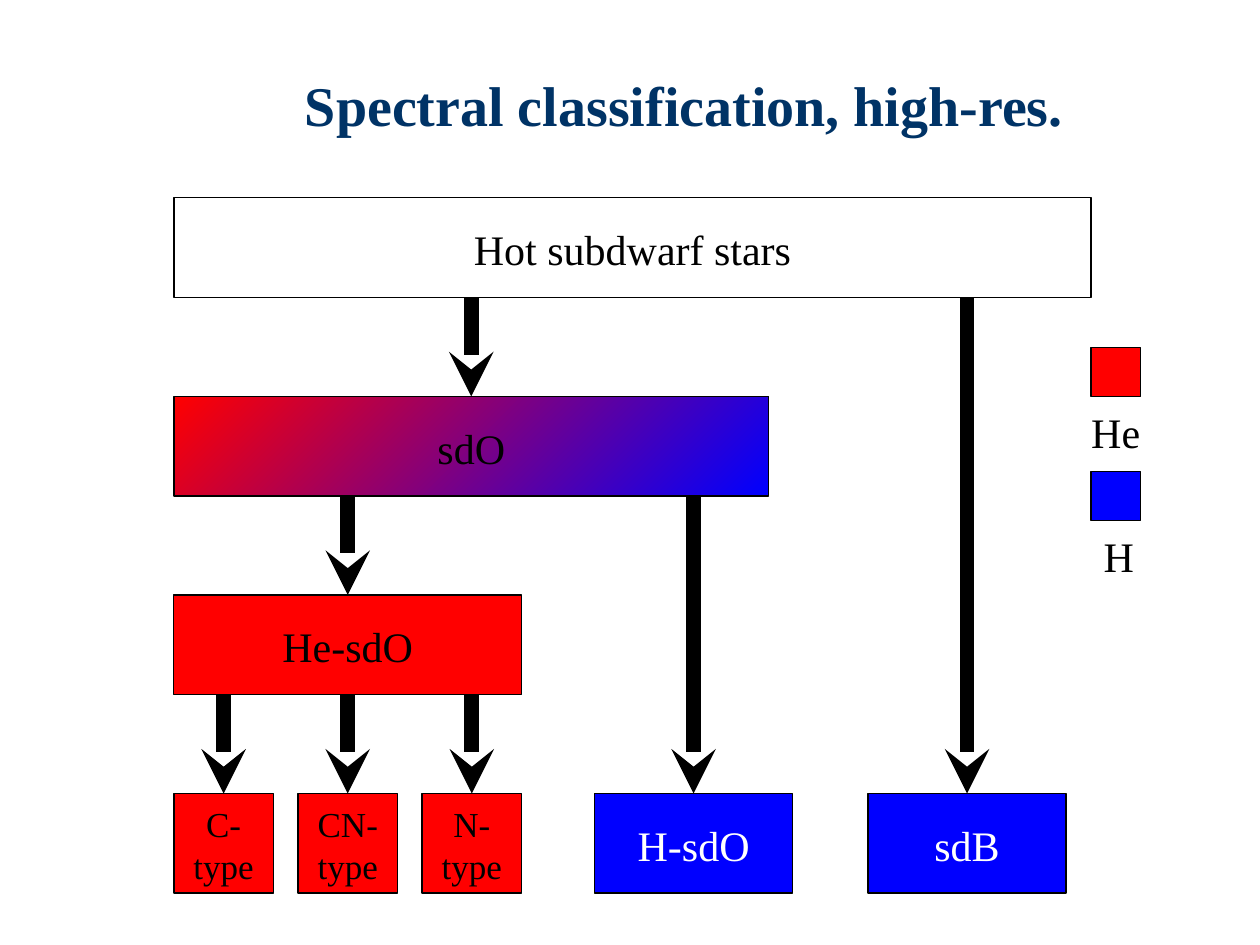
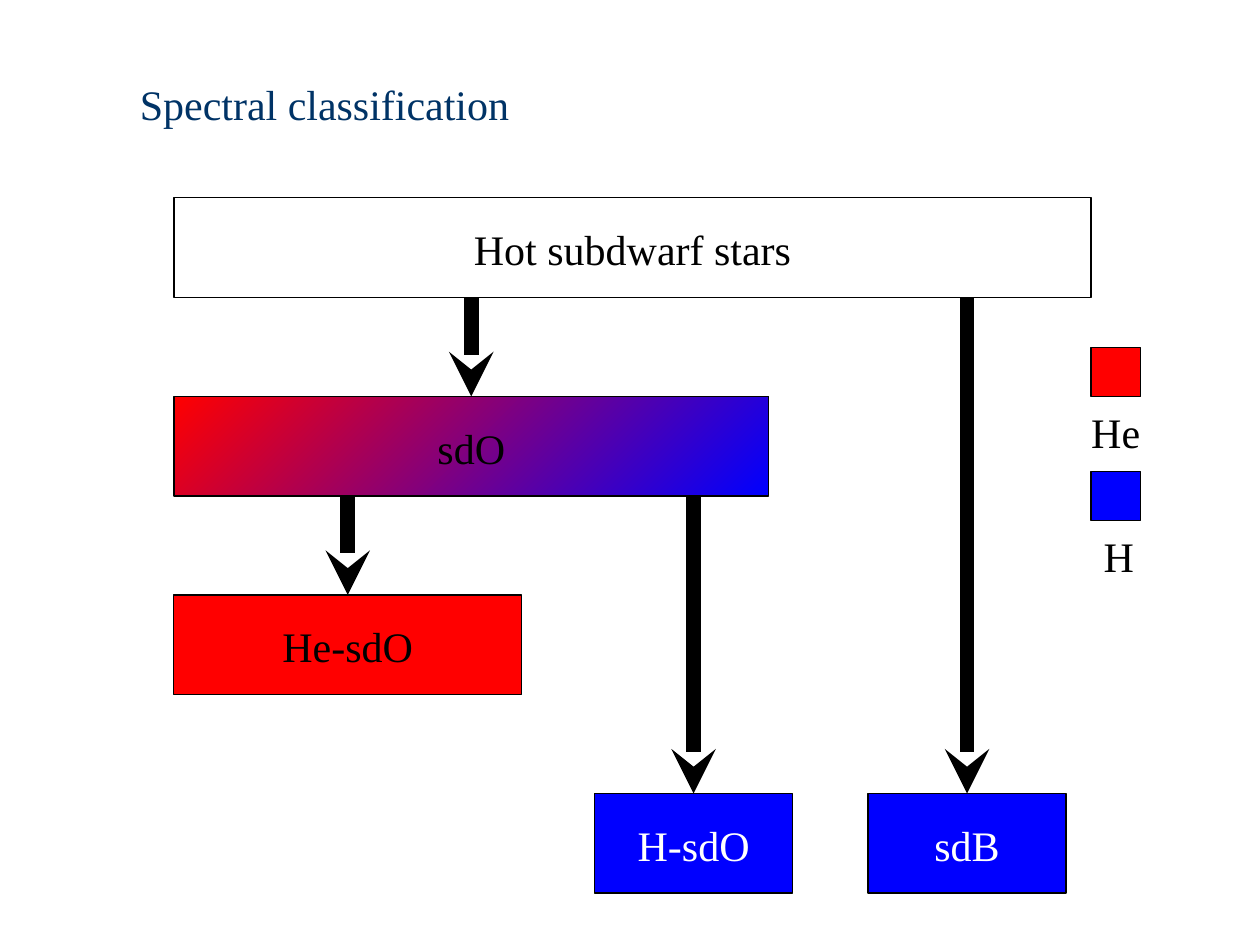
from lxml.etree import SubElement
from pptx import Presentation
from pptx.dml.color import RGBColor
from pptx.enum.shapes import MSO_CONNECTOR as Connector, MSO_SHAPE as Shape
from pptx.enum.text import MSO_ANCHOR as Anchor, MSO_AUTO_SIZE as AutoSize, PP_ALIGN as Align
from pptx.oxml.ns import qn
from pptx.util import Inches, Pt

FONT = "Times New Roman"
BLACK, WHITE, NAVY, RED, BLUE = "000000", "FFFFFF", "003366", "FF0000", "0000FF"
TITLE_ONLY = 5

LEFT, TOP, ROW_STEP, BOX_HEIGHT = 1.38, 1.57, 1.576, 0.79
TYPE_STEP = 0.985
SWATCH, SWATCH_LEFT, SWATCH_TOP, SWATCH_STEP = 0.39, 8.66, 2.76, 0.98

BOX_FRAME = {
    "margin_left": Inches(0.1), "margin_top": Inches(0.07),
    "margin_right": Inches(0.1), "margin_bottom": Inches(0.05),
    "vertical_anchor": Anchor.MIDDLE, "word_wrap": False,
}
LABEL_FRAME = {**BOX_FRAME, "vertical_anchor": Anchor.TOP, "word_wrap": True}
TITLE_FRAME = {
    "margin_left": 0, "margin_top": Inches(0.02), "margin_right": 0, "margin_bottom": 0,
    "vertical_anchor": Anchor.MIDDLE, "word_wrap": True, "auto_size": AutoSize.NONE,
}

COMMON_BOXES = [
    ("Hot subdwarf stars", LEFT, 0, 7.28, (), BLACK, 24),
    ("sdO", LEFT, 1, 4.72, (RED, BLUE), BLACK, 24),
    ("He-sdO", LEFT, 2, 2.76, (RED,), BLACK, 24),
    ("H-sdO", 4.72, 3, 1.57, (BLUE,), WHITE, 24),
    ("sdB", 6.89, 3, 1.57, (BLUE,), WHITE, 24),
]
COMMON_ARROWS = [
    ("Hot subdwarf stars", "sdO"), ("Hot subdwarf stars", "sdB"),
    ("sdO", "He-sdO"), ("sdO", "H-sdO"),
]
TYPES = ["C-\ntype", "CN-\ntype", "N-\ntype"]
TYPE_BOXES = [
    (name, LEFT + i * TYPE_STEP, 3, 0.79, (RED,), BLACK, 20) for i, name in enumerate(TYPES)
]
TYPE_ARROWS = [("He-sdO", name) for name in TYPES]
LEGEND = [("He", RED, 0.79), ("H", BLUE, 0.39)]


def rgb(color):
    """Turn a hex string into a colour."""
    return RGBColor.from_string(color)


def set_all(target, values):
    """Set each named attribute of the target."""
    for name, value in values.items():
        setattr(target, name, value)


def write(shape, text, frame_format, size, color, align=Align.CENTER, bold=False):
    """Put formatted text in a shape."""
    frame = shape.text_frame
    set_all(frame, frame_format)
    frame.text = text
    for para in frame.paragraphs:
        para.alignment = align
        for span in para.runs:
            set_all(span.font, {"name": FONT, "size": Pt(size), "bold": bold})
            span.font.color.rgb = rgb(color)


def add_title(page, text, left, width, size, bold):
    """Place and format the slide title."""
    title = page.shapes.title
    set_all(title, {"left": Inches(left), "top": Inches(0.42),
                    "width": Inches(width), "height": Inches(0.79)})
    write(title, text, TITLE_FRAME, size, NAVY, Align.LEFT, bold)


def add_rect(page, left, top, width, height, colors):
    """Add an outlined rectangle with no fill, one colour or a gradient."""
    rect = page.shapes.add_shape(
        Shape.RECTANGLE, Inches(left), Inches(top), Inches(width), Inches(height))
    rect.shadow.inherit = False
    rect.line.color.rgb = rgb(BLACK)
    rect.line.width = Pt(0.75)
    if not colors:
        rect.fill.background()
    elif len(colors) == 1:
        rect.fill.solid()
        rect.fill.fore_color.rgb = rgb(colors[0])
    else:
        rect.fill.gradient()
        rect.fill.gradient_angle = 315
        for stop, color in zip(rect.fill.gradient_stops, colors):
            stop.color.rgb = rgb(color)
    return rect


def add_box(page, text, left, row, width, colors, text_color, size):
    """Add a class box on a row of the tree."""
    box = add_rect(page, left, TOP + row * ROW_STEP, width, BOX_HEIGHT, colors)
    write(box, text, BOX_FRAME, size, text_color)
    return box


def add_arrow(page, parent, child):
    """Drop an arrow from the parent's lower edge to the child's top centre."""
    x = child.left + child.width // 2
    bottom = parent.top + parent.height
    arrow = page.shapes.add_connector(Connector.STRAIGHT, x, bottom, x, child.top)
    if abs(parent.left + parent.width // 2 - x) < Inches(0.02):
        arrow.begin_connect(parent, 2)
    arrow.end_connect(child, 0)
    arrow.line.color.rgb = rgb(BLACK)
    arrow.line.width = Pt(8.5)
    SubElement(arrow.line._get_or_add_ln(), qn("a:tailEnd"), type="stealth")
    SubElement(arrow._element.spPr, qn("a:effectLst"))


def add_legend(page):
    """Add the colour key for helium and hydrogen."""
    for i, (text, color, width) in enumerate(LEGEND):
        top = SWATCH_TOP + i * SWATCH_STEP
        add_rect(page, SWATCH_LEFT, top, SWATCH, SWATCH, (color,))
        label_left = SWATCH_LEFT + (SWATCH - width) / 2
        label = page.shapes.add_textbox(
            Inches(label_left), Inches(top + 0.4), Inches(width), Inches(0.38))
        write(label, text, LABEL_FRAME, 24, BLACK)


def add_tree_page(deck, title, boxes, arrows):
    """Add a slide with a title, a classification tree and its legend."""
    page = deck.slides.add_slide(deck.slide_layouts[TITLE_ONLY])
    add_title(page, *title)
    shapes = {box[0]: add_box(page, *box) for box in boxes}
    for parent, child in arrows:
        add_arrow(page, shapes[parent], shapes[child])
    add_legend(page)


def main():
    """Build and save the deck."""
    deck = Presentation()
    set_all(deck, {"slide_width": Inches(10), "slide_height": Inches(7.5)})
    add_tree_page(deck, ("Spectral classification, high-res.", 2.42, 6.58, 32, True),
                  COMMON_BOXES + TYPE_BOXES, COMMON_ARROWS + TYPE_ARROWS)
    add_tree_page(deck, ("Spectral classification", 1.11, 7.8, 24, False),
                  COMMON_BOXES, COMMON_ARROWS)
    deck.save("out.pptx")


if __name__ == "__main__":
    main()
